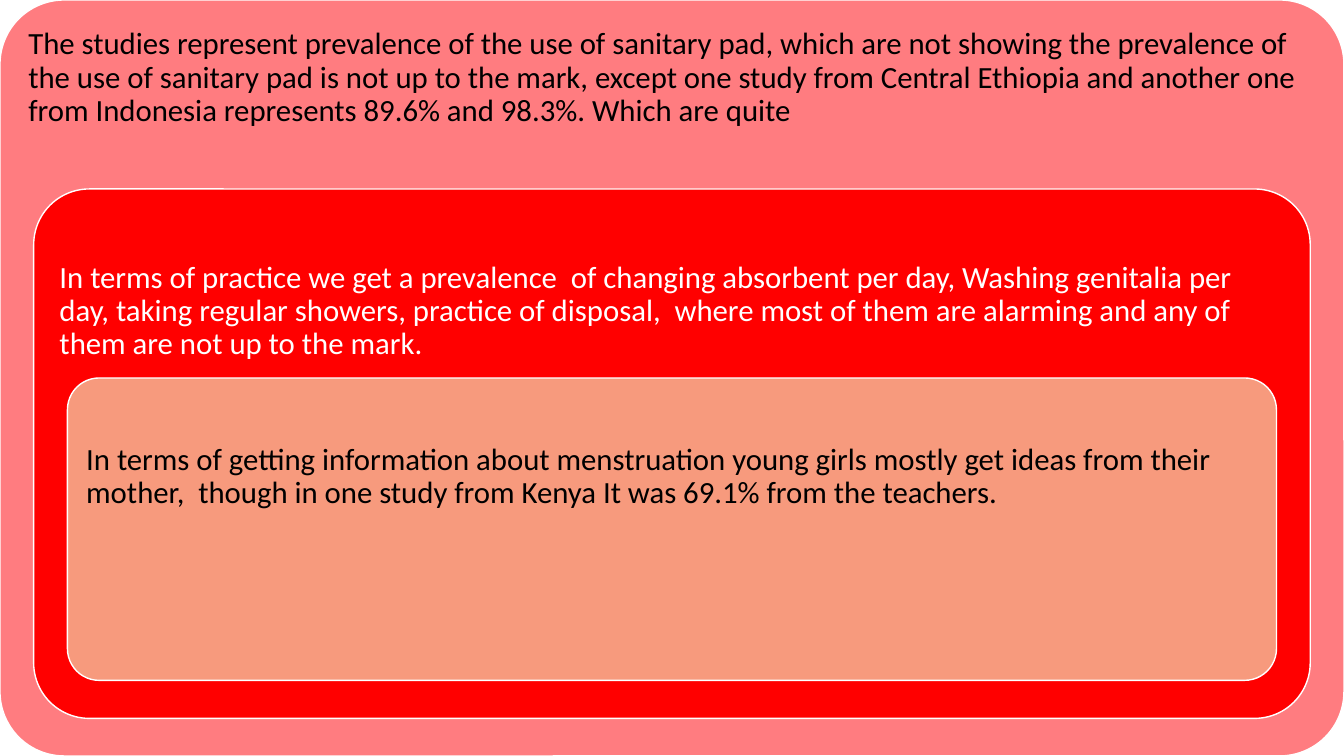
from pptx import Presentation
from pptx import util as u
from pptx.dml.color import RGBColor
from pptx.enum import shapes, text

HUES = {"rose": "FF7C80", "red": "FF0000", "peach": "F79A7D",
        "white": "FFFFFF", "black": "000000"}
WIDE, HIGH = 33.87, 19.05
STEP = 0.85
PANELS = [
    ("rose", "black", HIGH, 0.085, 0.24,
     "The studies represent prevalence of the use of sanitary pad, which are "
     "not showing the prevalence of the use of sanitary pad is not up to the "
     "mark, except one study from Central Ethiopia and another one from "
     "Indonesia represents 89.6% and 98.3%. Which are quite"),
    ("red", "white", 13.34, 0.105, 1.42,
     "In terms of practice we get a prevalence  of changing absorbent per "
     "day, Washing genitalia per day, taking regular showers, practice of "
     "disposal,  where most of them are alarming and any of them are not up "
     "to the mark."),
    ("peach", "black", 7.62, 0.105, 1.42,
     "In terms of getting information about menstruation young girls mostly "
     "get ideas from their mother,  though in one study from Kenya It was "
     "69.1% from the teachers."),
]


class Deck:
    """Holds the style and the current slide."""

    font, size, inset = "Calibri", 22, 0.24

    def __init__(self):
        self.file = Presentation()
        self.file.slide_width = u.Cm(WIDE)
        self.file.slide_height = u.Cm(HIGH)
        self.slide = self.file.slides.add_slide(self.file.slide_layouts[6])

    def hue(self, name):
        return RGBColor.from_string(HUES[name])

    def panel(self, left, top, width, height, fill, ink, bend, drop, words):
        box = self.slide.shapes.add_shape(
            shapes.MSO_SHAPE.ROUNDED_RECTANGLE,
            u.Cm(left), u.Cm(top), u.Cm(width), u.Cm(height))
        box.adjustments[0] = bend
        box.shadow.inherit = False
        box.fill.solid()
        box.fill.fore_color.rgb = self.hue(fill)
        box.line.color.rgb = self.hue("white")
        box.line.width = u.Pt(1)
        self.label(box.text_frame, words, ink, drop)

    def label(self, frame, words, ink, drop):
        frame.text = words
        frame.word_wrap = True
        frame.vertical_anchor = text.MSO_ANCHOR.TOP
        frame.margin_left = frame.margin_right = u.Cm(self.inset)
        frame.margin_top = u.Cm(drop)
        line = frame.paragraphs[0]
        line.alignment = text.PP_ALIGN.LEFT
        line.line_spacing = 0.9
        for run in line.runs:
            run.font.name = self.font
            run.font.size = u.Pt(self.size)
            run.font.color.rgb = self.hue(ink)


def main():
    deck = Deck()
    for rank, (fill, ink, height, bend, drop, words) in enumerate(PANELS):
        deck.panel(rank * STEP, rank * HIGH / 4, WIDE - 2 * rank * STEP,
                   height, fill, ink, bend, drop, words)
    deck.file.save("out.pptx")


if __name__ == "__main__":
    main()
